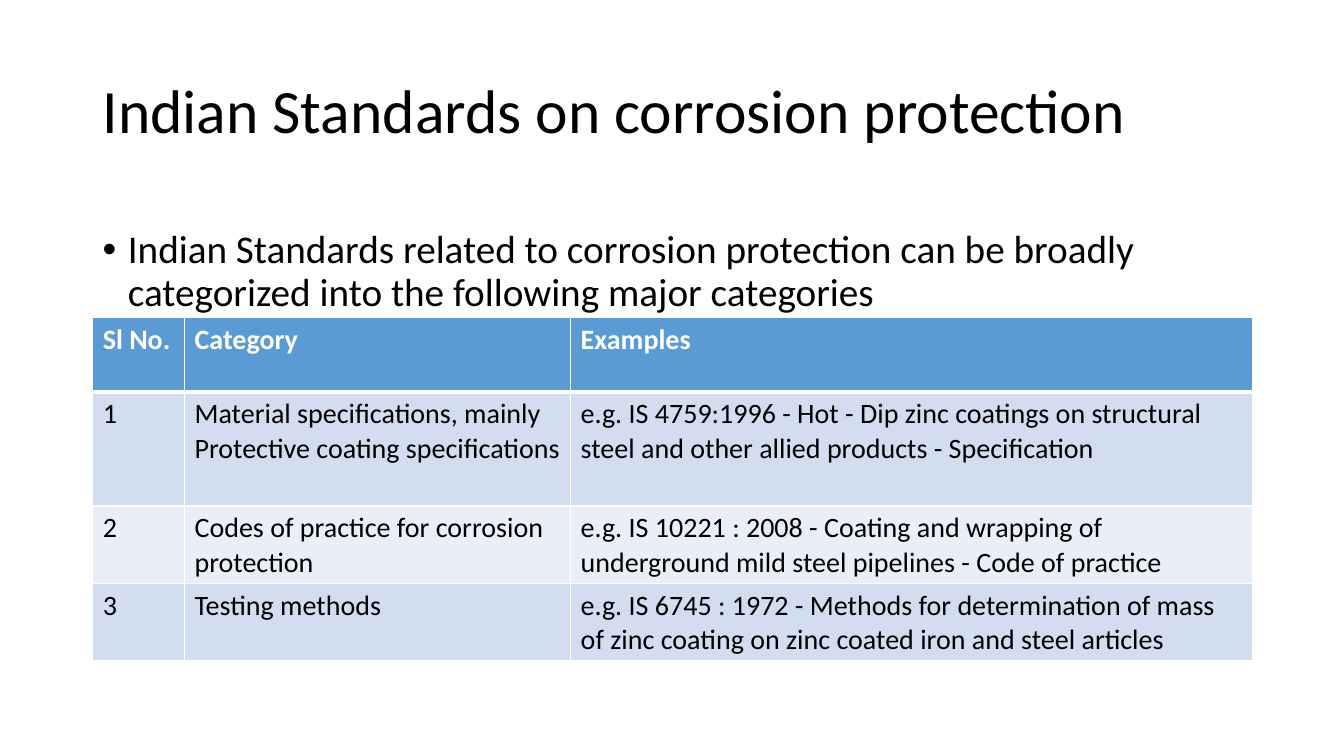
from lxml import etree
from pptx import Presentation
from pptx.dml.color import RGBColor
from pptx.enum.text import MSO_ANCHOR
from pptx.oxml.ns import qn
from pptx.util import Emu, Pt

MIDDLE = MSO_ANCHOR.MIDDLE
PX = 9144  # 100 px to the inch
FONT = "Calibri"
COLORS = {
    "text": "000000",
    "white": "FFFFFF",
    "header": "5B9BD5",
    "odd_row": "D2DEEF",
    "even_row": "EAEFF7",
}


def format_text(paragraph, size, color="text", bold=False):
    for run in paragraph.runs:
        run.font.name = FONT
        run.font.size = Pt(size)
        run.font.bold = bold
        run.font.color.rgb = RGBColor.from_string(COLORS[color])


def set_borders(cell, bottom_width):
    """Draw white lines on all four sides, 1 pt wide except at the bottom."""
    tc_pr = cell._tc.get_or_add_tcPr()
    widths = {"lnL": 1, "lnR": 1, "lnT": 1, "lnB": bottom_width}
    for position, (side, width) in enumerate(widths.items()):
        line = etree.Element(qn(f"a:{side}"), w=str(Pt(width)))
        fill = etree.SubElement(line, qn("a:solidFill"))
        etree.SubElement(fill, qn("a:srgbClr"), val=COLORS["white"])
        tc_pr.insert(position, line)


prs = Presentation()
prs.slide_width = Emu(1333 * PX)
prs.slide_height = Emu(750 * PX)
slide = prs.slides.add_slide(prs.slide_layouts[6])

# Title
title = slide.shapes.add_textbox(92 * PX, 40 * PX, 1150 * PX, 145 * PX).text_frame
title.word_wrap = True
title.vertical_anchor = MIDDLE
heading = title.paragraphs[0]
heading.text = "Indian Standards on corrosion protection"
heading.line_spacing = 0.9
format_text(heading, 44)

# Introductory bullet, set below the top of its box
body = slide.shapes.add_textbox(92 * PX, 167 * PX, 1150 * PX, 476 * PX).text_frame
body.word_wrap = True
body.margin_top = 61 * PX
intro = body.paragraphs[0]
intro.text = (
    "Indian Standards related to corrosion protection can be broadly "
    "categorized into the following major categories"
)
intro.line_spacing = 0.9
format_text(intro, 28)
intro_pr = intro._p.get_or_add_pPr()
intro_pr.set("marL", str(25 * PX))
intro_pr.set("indent", str(-25 * PX))
etree.SubElement(intro_pr, qn("a:buFont"), typeface="Arial")
etree.SubElement(intro_pr, qn("a:buChar"), char="•")

# Table of categories
COLUMN_WIDTHS = [91, 383, 676]
ROW_HEIGHTS = [74, 113, 74, 72]
CATEGORIES = [
    ("Sl No.", "Category", "Examples"),
    (
        "1",
        "Material specifications, mainly Protective coating specifications",
        "e.g. IS 4759:1996 - Hot - Dip zinc coatings on structural steel "
        "and other allied products - Specification",
    ),
    (
        "2",
        "Codes of practice for corrosion protection",
        "e.g. IS 10221 : 2008 - Coating and wrapping of underground mild "
        "steel pipelines - Code of practice",
    ),
    (
        "3",
        "Testing methods",
        "e.g. IS 6745 : 1972 - Methods for determination of mass of zinc "
        "coating on zinc coated iron and steel articles",
    ),
]
standards = slide.shapes.add_table(
    len(ROW_HEIGHTS), len(COLUMN_WIDTHS),
    92 * PX, 315 * PX, sum(COLUMN_WIDTHS) * PX, sum(ROW_HEIGHTS) * PX,
).table
for column, width in zip(standards.columns, COLUMN_WIDTHS):
    column.width = Emu(width * PX)

for row_index, (height, entries) in enumerate(zip(ROW_HEIGHTS, CATEGORIES)):
    standards.rows[row_index].height = Emu(height * PX)
    is_header = row_index == 0
    band = "header" if is_header else "odd_row" if row_index % 2 else "even_row"
    for column_index, entry in enumerate(entries):
        cell = standards.cell(row_index, column_index)
        cell.text_frame.text = entry
        format_text(cell.text_frame.paragraphs[0], 20,
                    "white" if is_header else "text", is_header)
        cell.fill.solid()
        cell.fill.fore_color.rgb = RGBColor.from_string(COLORS[band])
        set_borders(cell, 3 if is_header else 1)
    if row_index == 1:
        for cell in standards.rows[row_index].cells:
            cell._tc.tcPr.find(qn("a:lnT")).set("w", str(Pt(3)))

prs.save("out.pptx")
